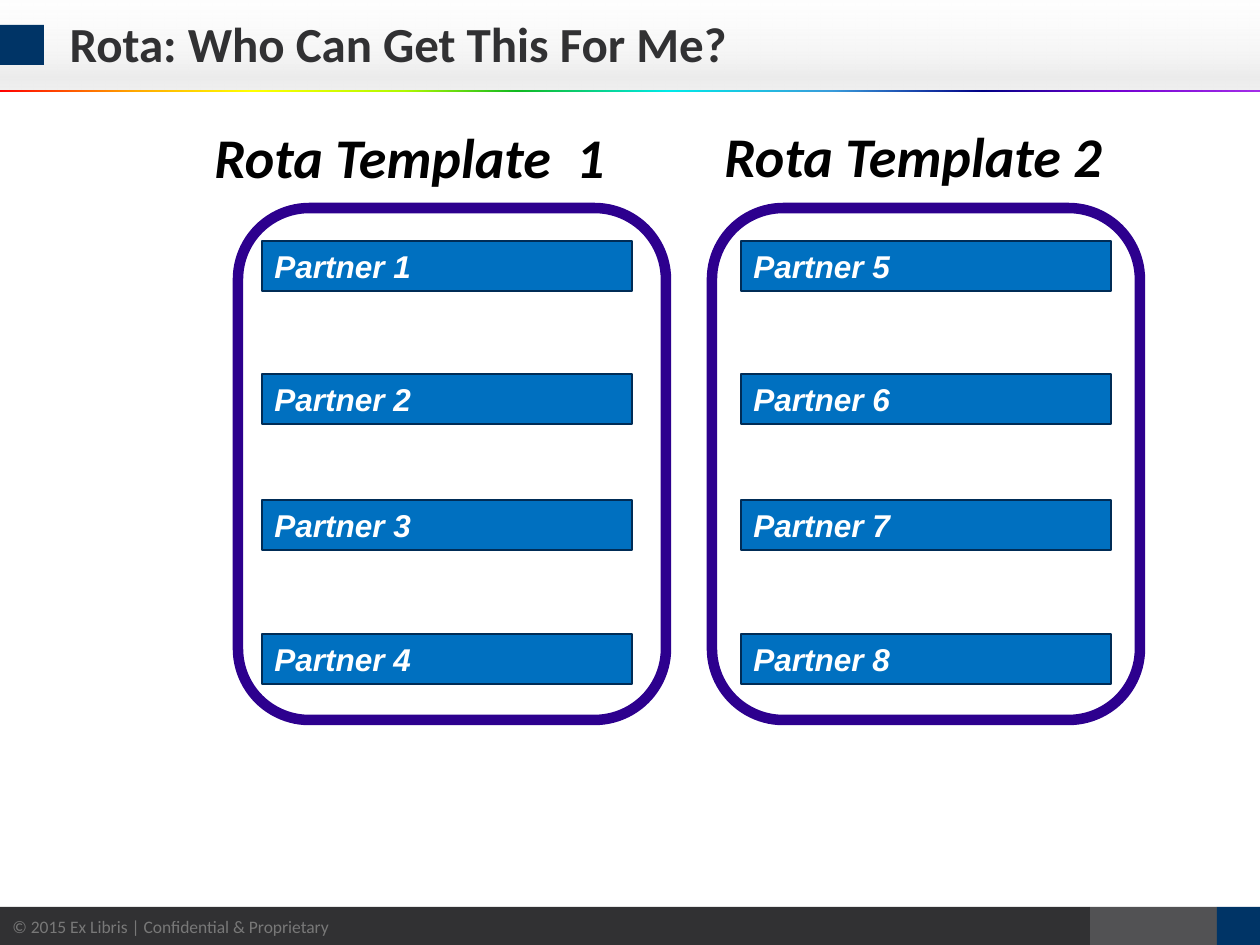
"""Builds the slide that shows two rota templates with their partners."""
from lxml import etree
from pptx import Presentation
from pptx import util as u
from pptx.dml.color import RGBColor
from pptx.enum import shapes, text
from pptx.oxml.ns import qn

PX = 914400 / 126
THEME = {
    "navy": "003466", "slate": "525254", "charcoal": "313133", "grey": "787878",
    "blue": "0070C0", "blue_edge": "002C56", "violet": "2D008E",
    "white": "FFFFFF", "black": "000000",
    "sheen": [(0, "FAFAFA", 12), (66, "D7D7D7", 30), (83, "D7D7D7", 47), (100, "E4E4E4", 54)],
    "rainbow": [(0, "A22DE8", 100), (12, "7200D1", 100), (22, "000086", 100),
                (34, "399CDB", 100), (47, "00E9E8", 100), (59, "11B920", 100),
                (68, "B1F900", 100), (80, "FFFF00", 100), (89, "FFAB00", 100),
                (100, "FF0000", 100)],
    "title_size": 28, "heading_size": 32, "partner_size": 18, "footer_size": 10,
}

prs = Presentation()
prs.slide_width, prs.slide_height = u.Inches(10), u.Inches(7.5)
slide = prs.slides.add_slide(prs.slide_layouts[5])


def add_box(box, fill=None, kind=shapes.MSO_SHAPE.RECTANGLE, edge=None, edge_width=0):
    shape = slide.shapes.add_shape(kind, *(u.Emu(round(v * PX)) for v in box))
    shape.shadow.inherit = False
    if fill:
        shape.fill.solid()
        shape.fill.fore_color.rgb = RGBColor.from_string(THEME[fill])
    else:
        shape.fill.background()
    if edge:
        shape.line.color.rgb = RGBColor.from_string(THEME[edge])
        shape.line.width = u.Pt(edge_width)
    else:
        shape.line.fill.background()
    return shape


def write(shape, words, size, color, font="Calibri", bold=True, italic=True,
          anchor=text.MSO_ANCHOR.TOP):
    frame = shape.text_frame
    frame.text = words
    frame.word_wrap = True
    frame.vertical_anchor = anchor
    line = frame.paragraphs[0]
    line.alignment = text.PP_ALIGN.LEFT
    face = line.runs[0].font
    face.name, face.size, face.bold, face.italic = font, u.Pt(THEME[size]), bold, italic
    face.color.rgb = RGBColor.from_string(THEME[color])
    return frame


add_box((1090, 907, 127, 40), "slate")
add_box((1217, 907, 44, 40), "navy")
header = add_box((-1, 1, 1261, 91))
footer = add_box((0, 907, 1090, 40), "charcoal")
write(footer, "© 2015 Ex Libris | Confidential & Proprietary", "footer_size", "grey",
      bold=False, italic=False, anchor=text.MSO_ANCHOR.MIDDLE)
add_box((0, 25, 44, 40), "navy")
rule = add_box((0, 90, 1260, 2))

for band, stops, angle in ((header, "sheen", 90), (rule, "rainbow", 180)):
    band.fill.gradient()
    gradient = band.fill._fill._gradFill
    stop_list = gradient.find(qn("a:gsLst"))
    for stop in list(stop_list):
        stop_list.remove(stop)
    for position, color, opacity in THEME[stops]:
        stop = etree.SubElement(stop_list, qn("a:gs"), pos=str(position * 1000))
        tint = etree.SubElement(stop, qn("a:srgbClr"), val=color)
        if opacity < 100:
            etree.SubElement(tint, qn("a:alpha"), val=str(opacity * 1000))
    gradient.find(qn("a:lin")).set("ang", str(angle * 60000))

title = slide.shapes.title
slide.shapes._spTree.append(title._element)
title.left, title.top, title.width, title.height = (
    u.Emu(round(v * PX)) for v in (57, 3, 1142, 87))
title_frame = write(title, "Rota: Who Can Get This For Me?", "title_size", "charcoal",
                    italic=False, anchor=text.MSO_ANCHOR.MIDDLE)
title_frame.paragraphs[0].line_spacing = 0.9

row_tops = (241, 374, 500, 634)
for column, left in enumerate((262, 741)):
    for row, top in enumerate(row_tops):
        partner = add_box((left, top, 370, 50), "blue", edge="blue_edge", edge_width=0.75)
        number = column * len(row_tops) + row + 1
        label = write(partner, f"Partner {number}", "partner_size", "white", font="Arial")
        label.auto_size = text.MSO_AUTO_SIZE.SHAPE_TO_FIT_TEXT

for left in (238, 712):
    add_box((left, 208, 428, 512), kind=shapes.MSO_SHAPE.ROUNDED_RECTANGLE,
            edge="violet", edge_width=6)

for words, box in (("Rota Template  1", (202, 116, 490, 81)),
                   ("Rota Template 2", (712, 115, 466, 81))):
    heading = slide.shapes.add_textbox(*(u.Emu(round(v * PX)) for v in box))
    heading_frame = write(heading, words, "heading_size", "black")
    heading_frame.auto_size = text.MSO_AUTO_SIZE.SHAPE_TO_FIT_TEXT

prs.save("out.pptx")
